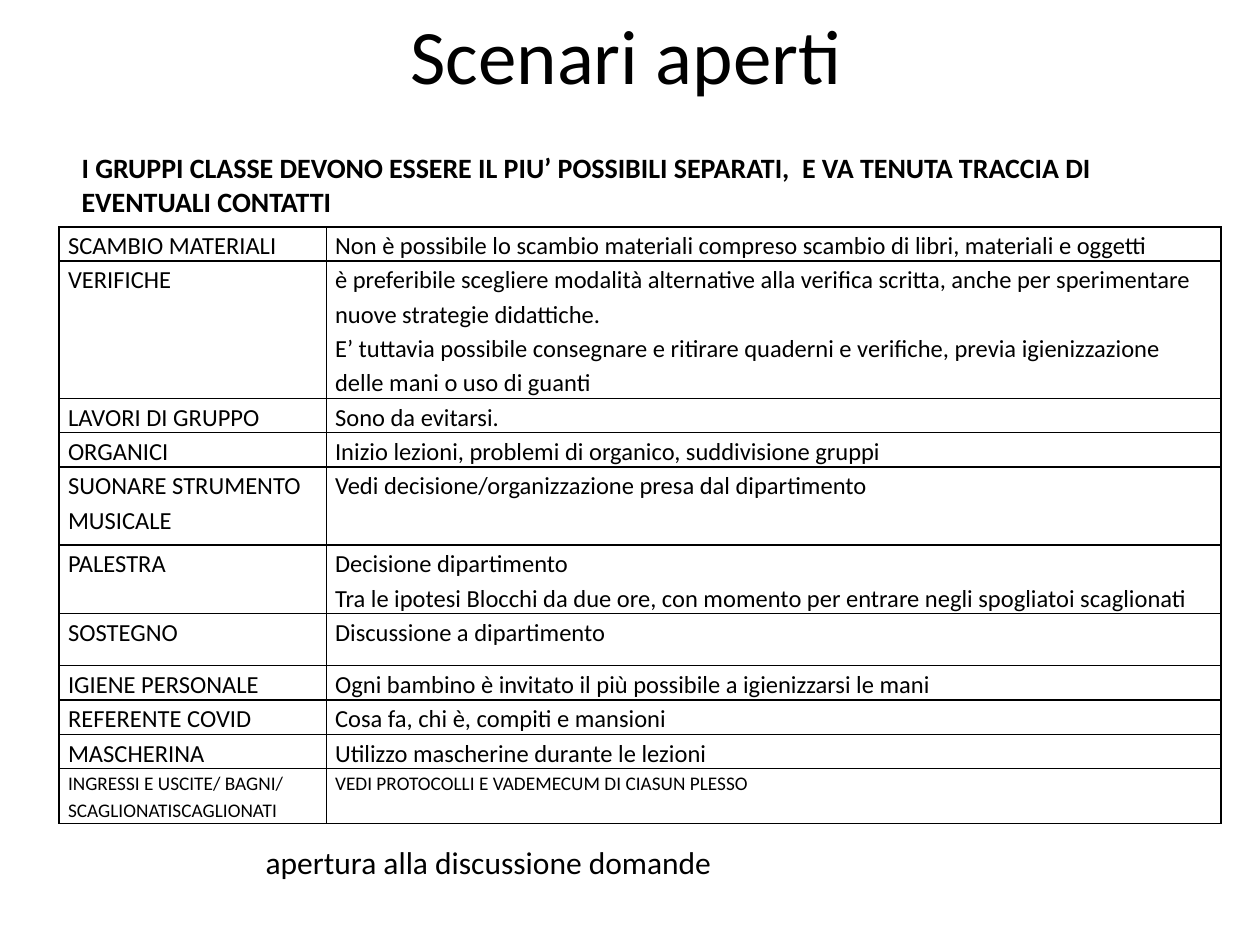
from lxml.etree import SubElement
from pptx import Presentation
from pptx.dml.color import RGBColor
from pptx.enum.text import MSO_ANCHOR as Anchor, PP_ALIGN as Align
from pptx.oxml.ns import qn
from pptx.util import Inches, Pt

BLACK = RGBColor(0x00, 0x00, 0x00)
FONT = "Calibri"

# Content: text, box (left, top, width, height), anchor, alignment, font
TEXTS = [
    ("Scenari aperti", (0.47, 0, 9, 0.86), Anchor.MIDDLE, Align.CENTER,
     {"size": Pt(44)}),
    ("I GRUPPI CLASSE DEVONO ESSERE IL PIU’ POSSIBILI SEPARATI,  "
     "E VA TENUTA TRACCIA DI EVENTUALI CONTATTI",
     (0.55, 0.86, 8.83, 1.21), Anchor.MIDDLE, Align.LEFT,
     {"size": Pt(16), "bold": True}),
    ("apertura alla discussione domande", (2.01, 6.64, 6.19, 0.4),
     Anchor.TOP, Align.LEFT, {"size": Pt(18)}),
]

# Topic, paragraphs, row height in lines, text size
TOPICS = [
    ("SCAMBIO MATERIALI",
     ["Non è possibile lo scambio materiali compreso scambio di libri, "
      "materiali e oggetti"], 1, 14),
    ("VERIFICHE",
     ["è preferibile scegliere modalità alternative alla verifica scritta, "
      "anche per sperimentare nuove strategie didattiche.",
      "E’ tuttavia possibile consegnare e ritirare quaderni e verifiche, "
      "previa igienizzazione delle mani o uso di guanti"], 4, 14),
    ("LAVORI DI GRUPPO", ["Sono da evitarsi."], 1, 14),
    ("ORGANICI",
     ["Inizio lezioni, problemi di organico, suddivisione gruppi"], 1, 14),
    ("SUONARE STRUMENTO MUSICALE",
     ["Vedi decisione/organizzazione presa dal dipartimento"], 3, 14),
    ("PALESTRA",
     ["Decisione dipartimento",
      "Tra le ipotesi Blocchi da due ore, con momento per entrare negli "
      "spogliatoi scaglionati"], 2, 14),
    ("SOSTEGNO", ["Discussione a dipartimento"], 2, 14),
    ("IGIENE PERSONALE",
     ["Ogni bambino è invitato il più possibile a igienizzarsi le mani"], 1, 14),
    ("REFERENTE COVID", ["Cosa fa, chi è, compiti e mansioni"], 1, 14),
    ("MASCHERINA", ["Utilizzo mascherine durante le lezioni"], 1, 14),
    ("INGRESSI E USCITE/ BAGNI/ SCAGLIONATISCAGLIONATI",
     ["VEDI PROTOCOLLI E VADEMECUM DI CIASUN PLESSO"], 1, 11),
]
TABLE_LEFT, TABLE_TOP = Inches(0.47), Inches(1.8)
COLUMNS = [Inches(2.12), Inches(7.1)]
LINE = Inches(0.62) // 3
CELL_FORMAT = {"margin_left": Inches(0.07), "margin_right": Inches(0.07),
               "margin_top": 0, "margin_bottom": 0}


def add_run(paragraph, text, **font_format):
    run = paragraph.add_run()
    run.text = text
    run.font.color.rgb = BLACK
    for name, value in {"name": FONT, **font_format}.items():
        setattr(run.font, name, value)


def add_borders(cell):
    properties = cell._tc.get_or_add_tcPr()
    for side in ("lnL", "lnR", "lnT", "lnB"):
        border = SubElement(properties, qn(f"a:{side}"), w=str(Pt(1)))
        fill = SubElement(border, qn("a:solidFill"))
        SubElement(fill, qn("a:srgbClr"), val=str(BLACK))


def fill_cell(cell, paragraphs, size):
    for name, value in CELL_FORMAT.items():
        setattr(cell, name, value)
    add_borders(cell)
    cell.fill.background()
    frame = cell.text_frame
    for i, text in enumerate(paragraphs):
        paragraph = frame.add_paragraph() if i else frame.paragraphs[0]
        paragraph.line_spacing = 1.15
        add_run(paragraph, text, size=Pt(size))


prs = Presentation()
prs.slide_width, prs.slide_height = Inches(10), Inches(7.5)
slide = prs.slides.add_slide(prs.slide_layouts[6])

# Topics table
table = slide.shapes.add_table(
    len(TOPICS), len(COLUMNS), TABLE_LEFT, TABLE_TOP, sum(COLUMNS),
    LINE * sum(lines for _, _, lines, _ in TOPICS)).table
table.first_row = table.horz_banding = False
for column, width in zip(table.columns, COLUMNS):
    column.width = width
for row, (topic, notes, lines, size) in zip(table.rows, TOPICS):
    row.height = LINE * lines
    fill_cell(row.cells[0], [topic], size)
    fill_cell(row.cells[1], notes, size)

# Title, heading and closing line
for text, box, anchor, alignment, font_format in TEXTS:
    frame = slide.shapes.add_textbox(*map(Inches, box)).text_frame
    frame.word_wrap = True
    frame.vertical_anchor = anchor
    frame.paragraphs[0].alignment = alignment
    add_run(frame.paragraphs[0], text, **font_format)

prs.save("out.pptx")
